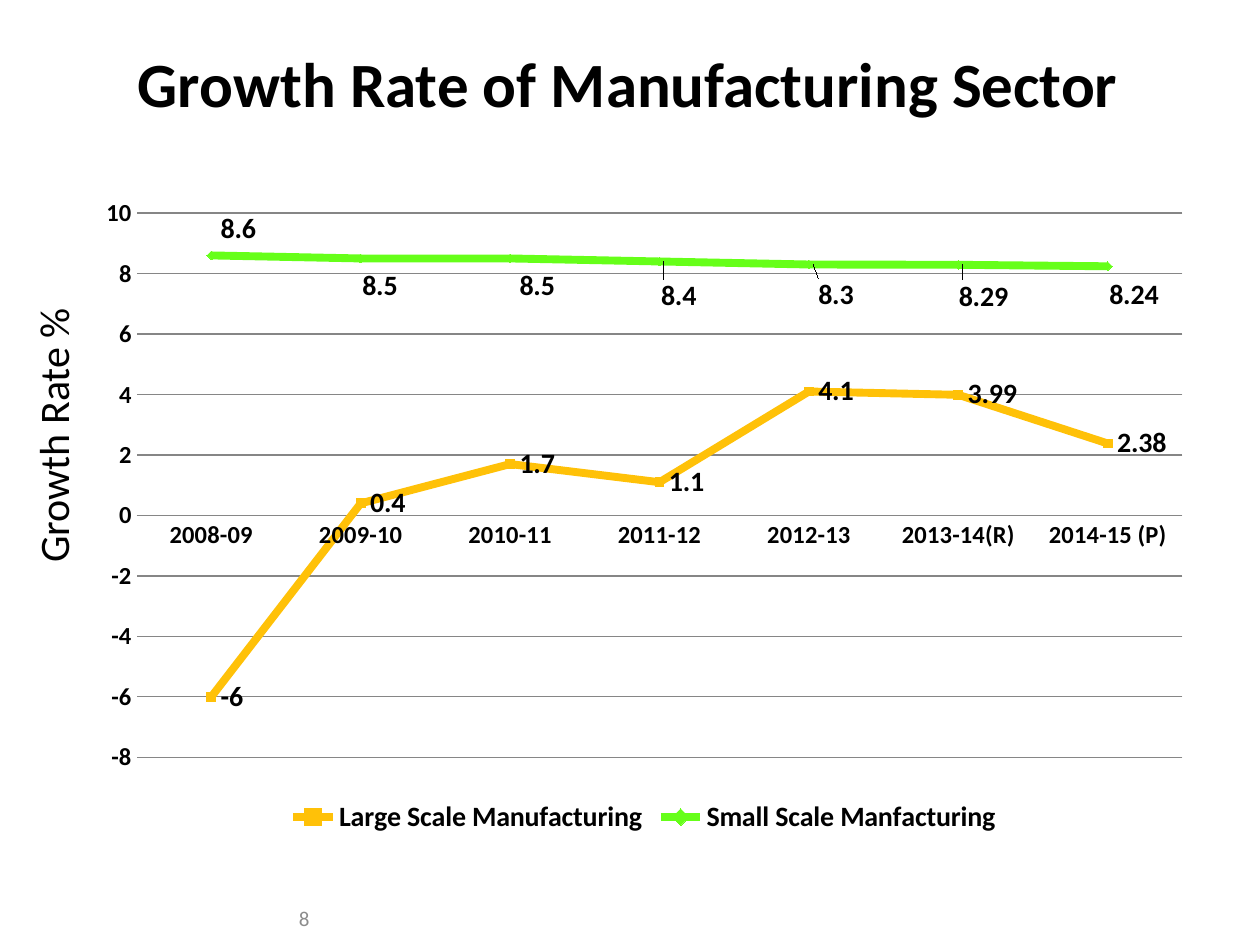
from lxml import etree
from pptx import Presentation
from pptx import util as u
from pptx.chart.data import CategoryChartData
from pptx.dml.color import RGBColor
from pptx.enum import chart as ch, text
from pptx.oxml import ns

PX = 914400 / 126
FONT = "Calibri"
BLACK = RGBColor(0x00, 0x00, 0x00)
GRAY = RGBColor(0x8C, 0x8C, 0x8C)
GRID = RGBColor(0x86, 0x86, 0x86)
AMBER = RGBColor(0xFF, 0xC1, 0x08)
GREEN = RGBColor(0x66, 0xFF, 0x19)

YEARS = ["2008-09", "2009-10", "2010-11", "2011-12", "2012-13", "2013-14(R)", "2014-15 (P)"]
LARGE_SCALE = [-6, 0.4, 1.7, 1.1, 4.1, 3.99, 2.38]
SMALL_SCALE = [8.6, 8.5, 8.5, 8.4, 8.3, 8.29, 8.24]
# Shift of each small-scale label from its place right of the point, in px
LABEL_SHIFTS = [(0, -26), (-8, 28), (0, 28), (-8, 35), (0, 31), (-9, 32), (-8, 29)]


def emu(*lengths):
    return [u.Emu(round(length * PX)) for length in lengths]


def set_layout(parent, index, **values):
    """Put a manual layout into a chart element as child number index."""
    layout = etree.Element(ns.qn("c:layout"))
    manual = etree.SubElement(layout, ns.qn("c:manualLayout"))
    for name, value in values.items():
        etree.SubElement(manual, ns.qn("c:" + name)).set("val", str(value))
    for old in parent.findall(ns.qn("c:layout")):
        parent.remove(old)
    parent.insert(index, layout)


class SlideBuilder:
    def __init__(self, slide):
        self.slide = slide

    def style(self, font, size, color=BLACK, bold=False):
        font.name, font.size, font.bold = FONT, u.Pt(size), bold
        font.color.rgb = color

    def text(self, box, words, size, color=BLACK, bold=False, align=text.PP_ALIGN.CENTER,
             anchor=text.MSO_ANCHOR.TOP, rotation=0):
        shape = self.slide.shapes.add_textbox(*emu(*box))
        shape.rotation = rotation
        frame = shape.text_frame
        frame.word_wrap = True
        frame.vertical_anchor = anchor
        paragraph = frame.paragraphs[0]
        paragraph.text = words
        paragraph.alignment = align
        self.style(paragraph.font, size, color, bold)

    def line_chart(self, box, plot_box, categories, series):
        data = CategoryChartData()
        data.categories = categories
        for name, values, *_ in series:
            data.add_series(name, values)
        chart = self.slide.shapes.add_chart(ch.XL_CHART_TYPE.LINE_MARKERS, *emu(*box), data).chart
        self.style(chart.font, 10)
        chart.has_title = False
        chart.has_legend = True
        chart.legend.position = ch.XL_LEGEND_POSITION.BOTTOM
        chart.legend.include_in_layout = False
        self.style(chart.legend.font, 16, bold=True)

        # Plot area, given in slide px
        left, top, width, height = box
        x, y, w, h = plot_box
        set_layout(chart.plots[0]._element.getparent(), 0, layoutTarget="inner",
                   xMode="edge", yMode="edge",
                   x=round((x - left) / width, 3), y=round((y - top) / height, 3),
                   w=round(w / width, 3), h=round(h / height, 3))

        # Axes
        for axis in (chart.category_axis, chart.value_axis):
            axis.major_tick_mark = axis.minor_tick_mark = ch.XL_TICK_MARK.NONE
            self.style(axis.tick_labels.font, 14, bold=True)
        values_axis = chart.value_axis
        values_axis.minimum_scale, values_axis.maximum_scale = -8, 10
        values_axis.major_unit = 2
        values_axis.format.line.fill.background()
        for line in (values_axis.major_gridlines.format.line, chart.category_axis.format.line):
            line.color.rgb = GRID
            line.width = u.Pt(0.75)

        # Series
        for plotted, (_, _, color, marker, shifts) in zip(chart.plots[0].series, series):
            plotted.smooth = False
            plotted.format.line.color.rgb = color
            plotted.format.line.width = u.Pt(4.5)
            plotted.marker.style = marker
            plotted.marker.size = 5
            plotted.marker.format.fill.solid()
            plotted.marker.format.fill.fore_color.rgb = color
            plotted.marker.format.line.color.rgb = color
            labels = plotted.data_labels
            labels.show_value = True
            labels.position = ch.XL_LABEL_POSITION.RIGHT
            self.style(labels.font, 16, bold=True)
            for number, (dx, dy) in enumerate(shifts):
                label = plotted.points[number].data_label
                label.position = ch.XL_LABEL_POSITION.RIGHT
                self.style(label.font, 16, bold=True)
                set_layout(labels._element.findall(ns.qn("c:dLbl"))[number], 1,
                           x=round(dx / width, 3), y=round(dy / height, 3))


def main():
    presentation = Presentation()
    presentation.slide_width, presentation.slide_height = emu(1260, 945)
    builder = SlideBuilder(presentation.slides.add_slide(presentation.slide_layouts[6]))

    # Title and slide number
    builder.text((25, 38, 1206, 158), "Growth Rate of Manufacturing Sector", 36, bold=True)
    builder.text((60, 896, 262, 45), "8", 12, GRAY, align=text.PP_ALIGN.RIGHT,
                 anchor=text.MSO_ANCHOR.MIDDLE)

    # Chart and its axis caption
    builder.text((-170, 404, 445, 63), "Growth Rate %", 24, rotation=270)
    builder.line_chart((84, 185, 1121, 655), (137, 213, 1046, 544), YEARS, [
        ("Large Scale Manufacturing", LARGE_SCALE, AMBER, ch.XL_MARKER_STYLE.SQUARE, []),
        ("Small Scale Manfacturing", SMALL_SCALE, GREEN, ch.XL_MARKER_STYLE.DIAMOND, LABEL_SHIFTS),
    ])

    presentation.save("out.pptx")


if __name__ == "__main__":
    main()
